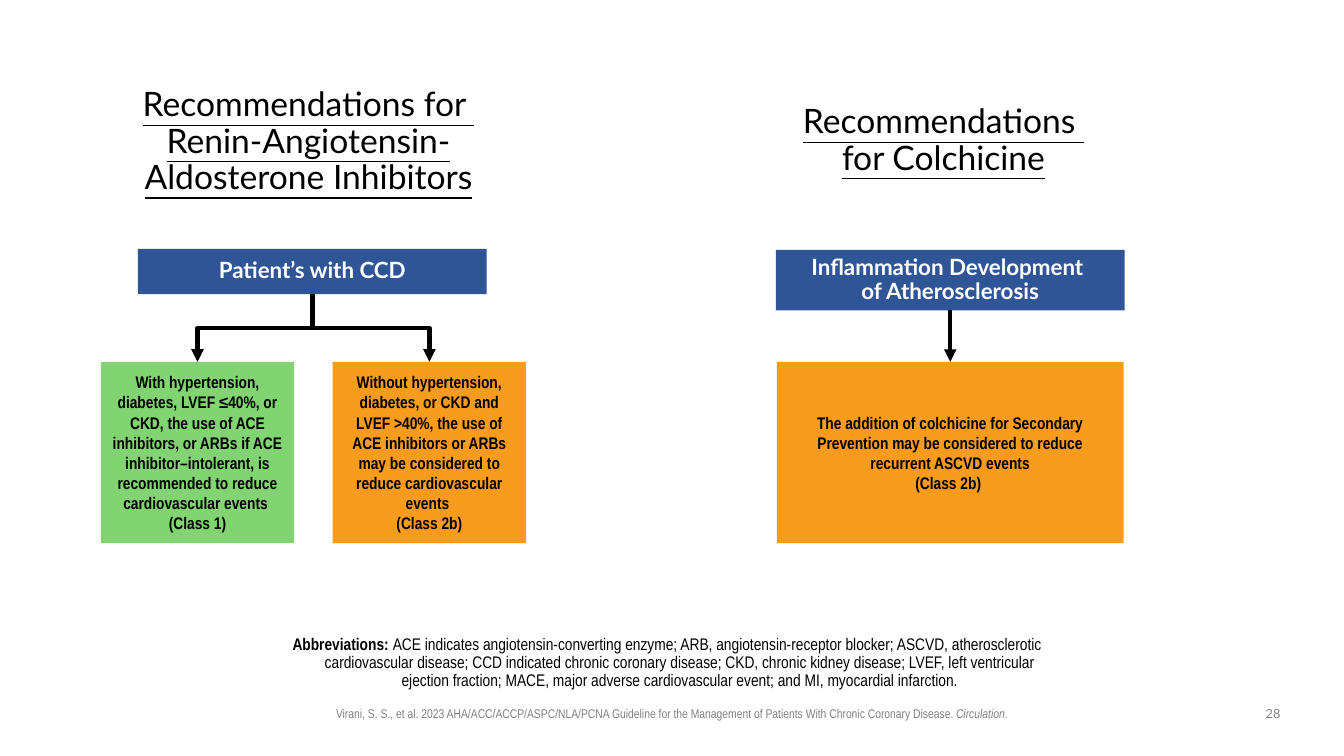
from pptx import Presentation
from pptx.dml.color import RGBColor
from pptx.enum.shapes import MSO_CONNECTOR as Link, MSO_SHAPE as Preset
from pptx.enum.text import MSO_ANCHOR as Anchor, PP_ALIGN as Align
from pptx.oxml.ns import qn
from pptx.util import Pt
from lxml.etree import SubElement

COLORS = {"black": "000000", "white": "FFFFFF", "grey": "808080",
          "blue": "2F5597", "green": "82D472", "orange": "F99B1D"}
BODY, HEADING = "Arial Narrow", "Lato"

# Content: places are left, top, width, height
TITLES = [
    ((56.2, 75.6, 328.3, 51.8),
     "Recommendations for \nRenin-Angiotensin-Aldosterone Inhibitors"),
    ((509.8, 74.9, 328.3, 51.8), "Recommendations \nfor Colchicine"),
]
CHARTS = [
    {"header": ((98.6, 177.8, 249.1, 32.4), "Patient’s with CCD"),
     "advice": [
         (72, 138.2, "green",
          ["With hypertension, diabetes, LVEF ≤40%, or CKD, the use of ACE "
           "inhibitors, or ARBs if ACE inhibitor–intolerant, is recommended "
           "to reduce cardiovascular events ", "(Class 1)"]),
         (237.6, 138.2, "orange",
          ["Without hypertension, diabetes, or CKD and LVEF >40%, the use of "
           "ACE inhibitors or ARBs may be considered to reduce "
           "cardiovascular events ", "(Class 2b)"]),
     ]},
    {"header": ((554.2, 178.5, 249.1, 43.2),
                "Inflammation Development \nof Atherosclerosis"),
     "advice": [
         (554.9, 247.7, "orange",
          ["The addition of colchicine for Secondary\nPrevention may be "
           "considered to reduce recurrent ASCVD events", "(Class 2b) "]),
     ]},
]
ADVICE_TOP, ADVICE_HEIGHT = 258.5, 129.6
ABBREVIATIONS = [
    ("Abbreviations: ", "bold"),
    ("ACE indicates angiotensin-converting enzyme; ARB, angiotensin-receptor "
     "blocker; ASCVD, atherosclerotic cardiovascular disease; CCD indicated "
     "chronic coronary disease; CKD, chronic kidney disease; LVEF, left "
     "ventricular ejection fraction; MACE, major adverse cardiovascular "
     "event; and MI, myocardial infarction.", None),
]
CITATION = [
    ("Virani, S. S., et al. 2023 AHA/ACC/ACCP/ASPC/NLA/PCNA Guideline for the "
     "Management of Patients With Chronic Coronary Disease. ", None),
    ("Circulation", "italic"),
    (".", None),
]
PAGE_NUMBER = "28"

deck = Presentation()
deck.slide_width, deck.slide_height = Pt(960), Pt(540)
page = deck.slides.add_slide(deck.slide_layouts[6])


def rgb(name):
    return RGBColor.from_string(COLORS[name])


def write(box, paragraphs, font, size, color="black", bold=None, underline=None,
          insets=(7.2, 3.6, 7.2, 3.6), anchor=Anchor.MIDDLE, spacing=1.0):
    """Fill a box with centred paragraphs: strings or lists of (text, style)."""
    frame = box.text_frame
    frame.word_wrap = True
    frame.vertical_anchor = anchor
    (frame.margin_left, frame.margin_top,
     frame.margin_right, frame.margin_bottom) = map(Pt, insets)
    for index, content in enumerate(paragraphs):
        para = frame.add_paragraph() if index else frame.paragraphs[0]
        if isinstance(content, str):
            para.text = content
        else:
            for text, style in content:
                span = para.add_run()
                span.text = text
                if style:
                    setattr(span.font, style, True)
        para.alignment = Align.CENTER
        para.line_spacing = spacing
        para.font.name, para.font.size = font, Pt(size)
        para.font.bold, para.font.underline = bold, underline
        para.font.color.rgb = rgb(color)
        # Runs carry the same look so that it holds in every viewer
        for span in para.runs:
            span.font.underline = underline


def text_box(place):
    return page.shapes.add_textbox(*map(Pt, place))


def block(place, fill):
    shape = page.shapes.add_shape(Preset.RECTANGLE, *map(Pt, place))
    shape.shadow.inherit = False
    shape.fill.solid()
    shape.fill.fore_color.rgb = rgb(fill)
    shape.line.fill.background()
    return shape


def arrow_down(x1, y1, x2, y2):
    """Arrow that leaves downwards and turns halfway if the ends differ in x."""
    if abs(x2 - x1) < 1:
        arrow = page.shapes.add_connector(Link.STRAIGHT, *map(Pt, (x1, y1, x1, y2)))
    else:
        # An elbow starts sideways, so lay it on its side and turn it
        side = 1 if x2 < x1 else -1
        middle_x, middle_y = (x1 + x2) / 2, (y1 + y2) / 2
        run, rise = side * (y2 - y1) / 2, abs(x2 - x1) / 2
        ends = (middle_x - run, middle_y - rise, middle_x + run, middle_y + rise)
        arrow = page.shapes.add_connector(Link.ELBOW, *map(Pt, ends))
        turn = 90 if side > 0 else 270
        arrow._element.spPr.find(qn("a:xfrm")).set("rot", str(turn * 60000))
    arrow.line.color.rgb = rgb("black")
    arrow.line.width = Pt(3)
    SubElement(arrow.line._get_or_add_ln(), qn("a:tailEnd"), type="triangle")
    SubElement(arrow._element.spPr, qn("a:effectLst"))


# Titles
for place, title in TITLES:
    write(text_box(place), [title], HEADING, 24, underline=True,
          insets=(0, 0, 0, 0), spacing=0.9)

# Flow charts: a header with arrows to its advice
for chart in CHARTS:
    place, heading = chart["header"]
    left, top, width, height = place
    write(block(place, "blue"), [heading], HEADING, 16, "white", bold=True,
          insets=(0, 0, 0, 0), spacing=0.9)
    for advice_left, advice_width, fill, lines in chart["advice"]:
        advice = block((advice_left, ADVICE_TOP, advice_width, ADVICE_HEIGHT), fill)
        write(advice, lines, BODY, 12, bold=True)
        arrow_down(left + width / 2, top + height,
                   advice_left + advice_width / 2, ADVICE_TOP)

# Abbreviations with a hanging indent
notes = text_box((198.7, 450.7, 563, 43.9))
write(notes, [ABBREVIATIONS], BODY, 12, insets=(0, 3.6, 7.2, 3.6),
      anchor=Anchor.TOP, spacing=0.9)
hanging = notes.text_frame.paragraphs[0]._p.get_or_add_pPr()
hanging.set("marL", str(Pt(18)))
hanging.set("indent", str(-Pt(18)))

# Footer
write(text_box((211.7, 500.4, 536.4, 18)), [CITATION], BODY, 9, "grey",
      anchor=Anchor.TOP)
write(text_box((894.2, 500.4, 30.2, 18.7)), [PAGE_NUMBER], HEADING, 9, "grey",
      anchor=Anchor.TOP)

deck.save("out.pptx")
